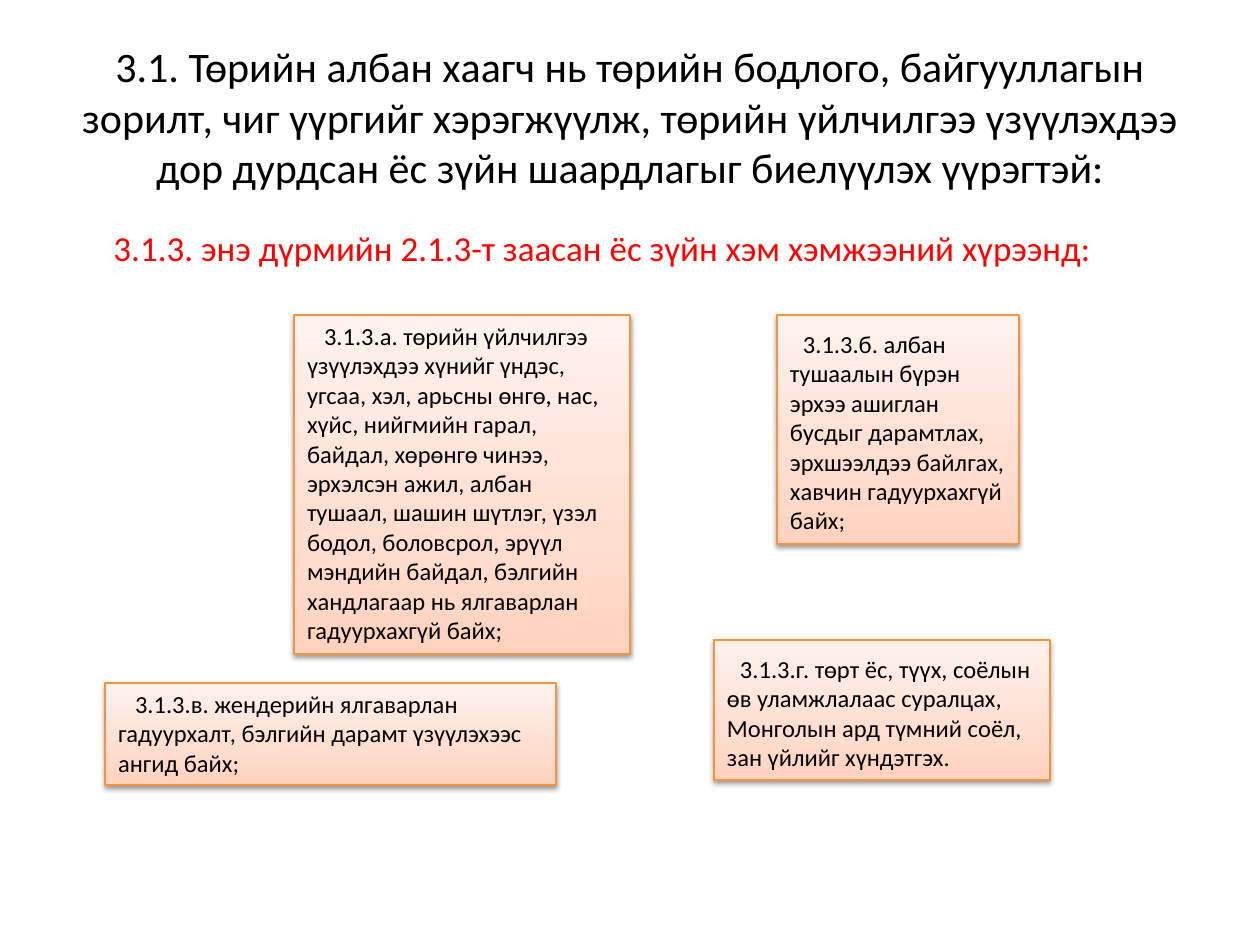
from dataclasses import dataclass

from lxml import etree
from pptx import Presentation
from pptx.dml.color import RGBColor
from pptx.enum import shapes, text
from pptx.oxml import parse_xml
from pptx.oxml.ns import nsdecls, qn
from pptx.util import Emu, Pt

PX = 914400 // 126  # one px in EMU
INSET_X, INSET_Y = 13, 6
FONT = "Calibri"
BORDER = "F69240"
PEACH_STOPS = ((0, "FFD2BD"), (35, "FFDED0"), (100, "FFF2ED"))


@dataclass
class Box:
    left: int
    top: int
    width: int
    height: int


@dataclass
class Rule:
    box: Box
    wording: str
    indent: int = 17
    extra_top: int = 0


def px(length: int) -> Emu:
    return Emu(length * PX)


def color(value: str) -> RGBColor:
    return RGBColor.from_string(value)


def place(box: Box) -> tuple:
    return px(box.left), px(box.top), px(box.width), px(box.height)


def write(shape, wording: str, *, size: int, hue: str = "000000",
          align=text.PP_ALIGN.LEFT, anchor=text.MSO_ANCHOR.TOP,
          top: int = INSET_Y, right: int = INSET_X, indent: int = 0) -> None:
    frame = shape.text_frame
    frame.word_wrap = True
    frame.vertical_anchor = anchor
    frame.margin_left, frame.margin_right = px(INSET_X), px(right)
    frame.margin_top, frame.margin_bottom = px(top), px(INSET_Y)
    paragraph = frame.paragraphs[0]
    paragraph.alignment = align
    if indent:
        paragraph._p.get_or_add_pPr().set("indent", str(px(indent)))
    run = paragraph.add_run()
    run.text = wording
    run.font.name, run.font.size = FONT, Pt(size)
    run.font.color.rgb = color(hue)


def fill_peach(shape) -> None:
    """Three-stop gradient running from the bottom edge to the top."""
    stops = "".join(
        f'<a:gs pos="{pos * 1000}"><a:srgbClr val="{hue}"/></a:gs>'
        for pos, hue in PEACH_STOPS)
    gradient = parse_xml(
        f'<a:gradFill {nsdecls("a")} rotWithShape="1"><a:gsLst>{stops}</a:gsLst>'
        '<a:lin ang="16200000" scaled="0"/></a:gradFill>')
    shape._element.spPr.find(qn("a:prstGeom")).addnext(gradient)


def drop_shadow(shape) -> None:
    shape.shadow.inherit = False
    effects = shape._element.spPr.find(qn("a:effectLst"))
    shadow = etree.SubElement(
        effects, qn("a:outerShdw"), blurRad=str(Pt(3.1)), dist=str(Pt(1.6)),
        dir="5400000", rotWithShape="0")
    black = etree.SubElement(shadow, qn("a:srgbClr"), val="000000")
    etree.SubElement(black, qn("a:alpha"), val="38000")


def draw_rule(slide, rule: Rule) -> None:
    card = slide.shapes.add_shape(shapes.MSO_SHAPE.RECTANGLE, *place(rule.box))
    fill_peach(card)
    card.line.color.rgb = color(BORDER)
    card.line.width = Pt(0.75)
    drop_shadow(card)
    write(card, rule.wording, size=14, indent=rule.indent,
          top=INSET_Y + rule.extra_top)
    card.text_frame.auto_size = text.MSO_AUTO_SIZE.SHAPE_TO_FIT_TEXT


RULES = [
    Rule(Box(294, 315, 336, 339),
         "3.1.3.а. төрийн үйлчилгээ үзүүлэхдээ хүнийг үндэс, угсаа, хэл, "
         "арьсны өнгө, нас, хүйс, нийгмийн гарал, байдал, хөрөнгө чинээ, "
         "эрхэлсэн ажил, албан тушаал, шашин шүтлэг, үзэл бодол, боловсрол, "
         "эрүүл мэндийн байдал, бэлгийн хандлагаар нь ялгаварлан "
         "гадуурхахгүй байх;"),
    Rule(Box(777, 315, 242, 229),
         "3.1.3.б. албан тушаалын бүрэн эрхээ ашиглан бусдыг дарамтлах, "
         "эрхшээлдээ байлгах, хавчин гадуурхахгүй байх;",
         indent=13, extra_top=8),
    Rule(Box(105, 683, 451, 102),
         "3.1.3.в. жендерийн ялгаварлан гадуурхалт, бэлгийн дарамт "
         "үзүүлэхээс ангид байх;"),
    Rule(Box(714, 640, 336, 140),
         "3.1.3.г. төрт ёс, түүх, соёлын өв уламжлалаас суралцах, Монголын "
         "ард түмний соёл, зан үйлийг хүндэтгэх.",
         indent=13, extra_top=8),
]


def main() -> None:
    deck = Presentation()
    deck.slide_width, deck.slide_height = px(1260), px(945)
    slide = deck.slides.add_slide(deck.slide_layouts[6])

    # Headings
    title = slide.shapes.add_textbox(*place(Box(63, 38, 1134, 157)))
    write(title,
          "3.1. Төрийн албан хаагч нь төрийн бодлого, байгууллагын зорилт, "
          "чиг үүргийг хэрэгжүүлж, төрийн үйлчилгээ үзүүлэхдээ дор дурдсан "
          "ёс зүйн шаардлагыг биелүүлэх үүрэгтэй:",
          size=24, align=text.PP_ALIGN.CENTER, anchor=text.MSO_ANCHOR.MIDDLE)
    scope = slide.shapes.add_textbox(*place(Box(73, 221, 1124, 53)))
    write(scope,
          "3.1.3. энэ дүрмийн 2.1.3-т заасан ёс зүйн хэм хэмжээний хүрээнд:",
          size=20, hue="FF0000", align=text.PP_ALIGN.CENTER, right=78)

    # Rule cards
    for rule in RULES:
        draw_rule(slide, rule)

    deck.save("out.pptx")


if __name__ == "__main__":
    main()
